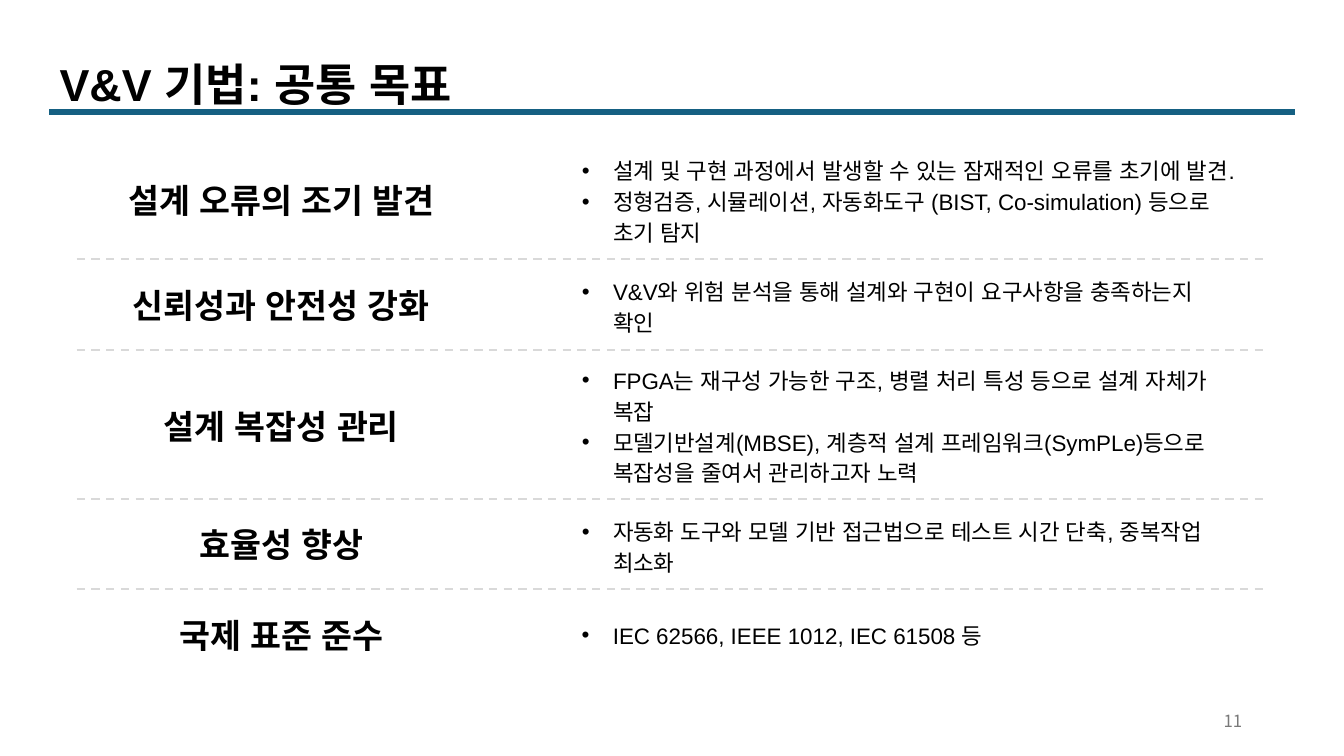
from lxml import etree
from pptx import Presentation
from pptx import util as u
from pptx.dml.color import RGBColor
from pptx.enum import dml, shapes, text
from pptx.oxml.ns import qn

PX = 9144  # one hundredth of an inch
BLACK = RGBColor(0x00, 0x00, 0x00)
BLUE = RGBColor(0x15, 0x60, 0x82)
PALE = RGBColor(0xD9, 0xD9, 0xD9)
GREY = RGBColor(0x79, 0x79, 0x79)
SANS = "Arial"
NOTO = "Noto Sans CJK KR"
LEFT, MID, RIGHT = text.PP_ALIGN.LEFT, text.PP_ALIGN.CENTER, text.PP_ALIGN.RIGHT

# goal, its top, list top, list height, list items
ROWS = [
    ("설계 오류의 조기 발견", 168, 147, 100, [
        "설계 및 구현 과정에서 발생할 수 있는 잠재적인 오류를 초기에 발견.",
        "정형검증, 시뮬레이션, 자동화도구 (BIST, Co-simulation) 등으로 \n초기 탐지"]),
    ("신뢰성과 안전성 강화", 272, 267, 69, [
        "V&V와 위험 분석을 통해 설계와 구현이 요구사항을 충족하는지 \n확인"]),
    ("설계 복잡성 관리", 392, 355, 131, [
        "FPGA는 재구성 가능한 구조, 병렬 처리 특성 등으로 설계 자체가 \n복잡",
        "모델기반설계(MBSE), 계층적 설계 프레임워크(SymPLe)등으로 \n"
        "복잡성을 줄여서 관리하고자 노력"]),
    ("효율성 향상", 509, 505, 69, [
        "자동화 도구와 모델 기반 접근법으로 테스트 시간 단축, 중복작업 \n최소화"]),
    ("국제 표준 준수", 599, 608, 38, ["IEC 62566, IEEE 1012, IEC 61508 등"]),
]
RULES = [257, 347, 495, 584]


def place(box, x, y, w, h):
    box.left, box.top, box.width, box.height = (n * PX for n in (x, y, w, h))


def add_box(slide):
    return slide.shapes.add_textbox(0, 0, PX, PX)


def write(par, words, size, bold=False, color=BLACK, face=SANS):
    """Add the words run by run, with a line break at each newline."""
    for i, line in enumerate(words.split("\n")):
        if i:
            par.add_line_break()
        run = par.add_run()
        run.text = line
        font = run.font
        font.name, font.size, font.bold = face, u.Pt(size), bold
        font.color.rgb = color
        east = etree.Element(qn("a:ea"), typeface=face)
        font._element.find(qn("a:latin")).addnext(east)


def set_frame(box, wrap=True, anchor=text.MSO_ANCHOR.TOP,
              fit=text.MSO_AUTO_SIZE.SHAPE_TO_FIT_TEXT):
    frame = box.text_frame
    frame.word_wrap = wrap
    frame.auto_size = fit
    frame.vertical_anchor = anchor
    return frame


def set_par(par, align, space=1.15):
    par.alignment = align
    par.line_spacing = space
    par.space_before = par.space_after = u.Pt(0)


def add_dot(par, indent):
    props = par._p.get_or_add_pPr()
    props.set("marL", str(indent * PX))
    props.set("indent", str(-indent * PX))
    etree.SubElement(props, qn("a:buFont"), typeface=SANS)
    etree.SubElement(props, qn("a:buChar"), char="•")


def fill_head(box, words, size, align, wrap=True):
    par = set_frame(box, wrap).paragraphs[0]
    set_par(par, align)
    write(par, words, size, bold=True)


def fill_list(box, items):
    frame = set_frame(box)
    for i, item in enumerate(items):
        par = frame.add_paragraph() if i else frame.paragraphs[0]
        set_par(par, LEFT)
        add_dot(par, 31)
        write(par, item, 16)


def add_rule(slide, x, end, y, color, width, dash=None):
    rule = slide.shapes.add_connector(
        shapes.MSO_CONNECTOR.STRAIGHT, x * PX, y * PX, end * PX, y * PX)
    rule.line.color.rgb = color
    rule.line.width = u.Pt(width)
    if dash:
        rule.line.dash_style = dash
    etree.SubElement(rule._element.spPr, qn("a:effectLst"))


def add_page(slide, number):
    box = add_box(slide)
    place(box, 942, 695, 300, 40)
    frame = set_frame(box, anchor=text.MSO_ANCHOR.MIDDLE, fit=text.MSO_AUTO_SIZE.NONE)
    par = frame.paragraphs[0]
    set_par(par, RIGHT, 1.0)
    write(par, number, 12, color=GREY, face=NOTO)


def main():
    deck = Presentation()
    deck.slide_width, deck.slide_height = 1333 * PX, 750 * PX
    # The Comparison layout offers a title and four bodies.
    slide = deck.slides.add_slide(deck.slide_layouts[4])
    title, *bodies = slide.placeholders

    add_rule(slide, 49, 1284, 111, BLUE, 4.5)
    place(title, 49, 43, 447, 66)
    fill_head(title, "V&V 기법: 공통 목표", 32, LEFT, wrap=False)

    for goal, top, start, high, items in ROWS:
        head = add_box(slide)
        place(head, 34, top, 490, 52)
        fill_head(head, goal, 24, MID)
        body = bodies.pop(0) if bodies else add_box(slide)
        place(body, 567, start, 732, high)
        fill_list(body, items)

    for y in RULES:
        add_rule(slide, 76, 1257, y, PALE, 1.5, dml.MSO_LINE.DASH)
    add_page(slide, "11")
    deck.save("out.pptx")


if __name__ == "__main__":
    main()
